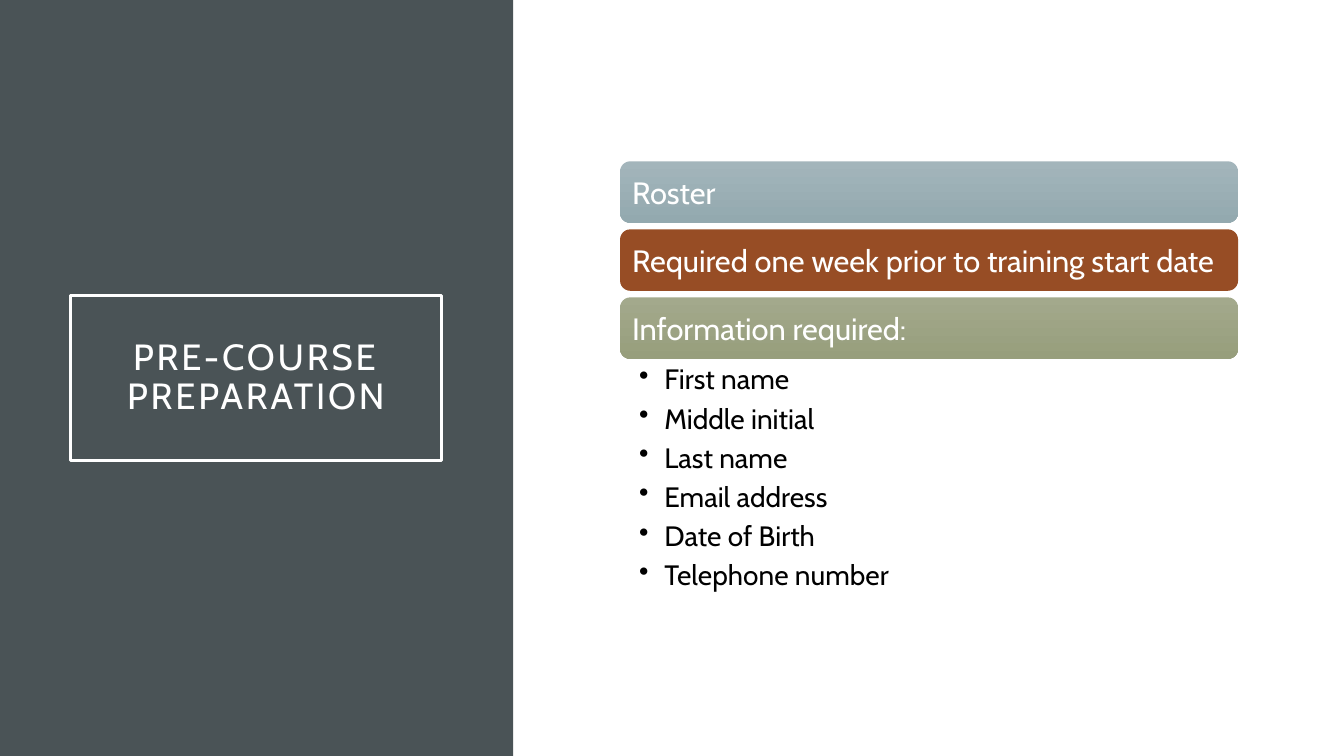
import pptx
import pptx.util
import pptx.dml.color
import pptx.enum.shapes
import pptx.enum.text
import pptx.oxml.ns
from lxml import etree

Inches = pptx.util.Inches
Pt = pptx.util.Pt
SHAPES = pptx.enum.shapes.MSO_SHAPE
ANCHOR = pptx.enum.text.MSO_ANCHOR
ALIGN = pptx.enum.text.PP_ALIGN

TITLE = "PRE-COURSE PREPARATION"
BARS = [
    ("Roster", ("blue_top", "blue_bottom")),
    ("Required one week prior to training start date", ("rust",)),
    ("Information required:", ("green_top", "green_bottom")),
]
DETAILS = ["First name", "Middle initial", "Last name",
           "Email address", "Date of Birth", "Telephone number"]
COLORS = {
    "panel": "4A5356", "white": "FFFFFF", "black": "000000",
    "blue_top": "A3B5BB", "blue_bottom": "93A9AF", "rust": "974D25",
    "green_top": "A3A98C", "green_bottom": "979E7C",
}
FONT = "Cabin"
BAR_LEFT, BAR_TOP, BAR_WIDTH, BAR_HEIGHT = 6.15, 1.6, 6.13, 0.61
BAR_STEP = 0.675


def color(name):
    return pptx.dml.color.RGBColor.from_string(COLORS[name])


def add_box(slide, kind, left, top, width, height, fills=()):
    shape = slide.shapes.add_shape(
        kind, Inches(left), Inches(top), Inches(width), Inches(height))
    shape.shadow.inherit = False
    shape.line.fill.background()
    if len(fills) == 2:
        shape.fill.gradient()
        shape.fill.gradient_angle = 270
        for stop, name in zip(shape.fill.gradient_stops, fills):
            stop.color.rgb = color(name)
    elif fills:
        shape.fill.solid()
        shape.fill.fore_color.rgb = color(fills[0])
    else:
        shape.fill.background()
    return shape


def set_frame(shape, insets, anchor):
    frame = shape.text_frame
    frame.word_wrap = True
    frame.vertical_anchor = anchor
    (frame.margin_left, frame.margin_top,
     frame.margin_right, frame.margin_bottom) = map(Inches, insets)
    return frame


def add_run(paragraph, text, size, name):
    run = paragraph.add_run()
    run.text = text
    run.font.size = Pt(size)
    run.font.name = FONT
    run.font.color.rgb = color(name)
    return run


def add_bullet(paragraph):
    properties = paragraph._p.get_or_add_pPr()
    properties.set("marL", str(Inches(0.25)))
    properties.set("indent", str(Inches(-0.25)))
    bullet = etree.SubElement(properties, pptx.oxml.ns.qn("a:buChar"))
    bullet.set("char", "•")


def add_title(slide):
    add_box(slide, SHAPES.RECTANGLE, 0, 0, 5.09, 7.5, ("panel",))
    shape = add_box(slide, SHAPES.RECTANGLE, 0.7, 2.93, 3.68, 1.64)
    shape.line.color.rgb = color("white")
    shape.line.width = Pt(2.5)
    paragraph = set_frame(shape, (0.2,) * 4, ANCHOR.MIDDLE).paragraphs[0]
    paragraph.alignment = ALIGN.CENTER
    paragraph.line_spacing = 0.9
    run = add_run(paragraph, TITLE, 26, "white")
    run._r.get_or_add_rPr().set("spc", "200")


def add_bars(slide):
    for index, (text, fills) in enumerate(BARS):
        shape = add_box(slide, SHAPES.ROUNDED_RECTANGLE, BAR_LEFT,
                        BAR_TOP + index * BAR_STEP, BAR_WIDTH, BAR_HEIGHT, fills)
        paragraph = set_frame(shape, (0.09,) * 4, ANCHOR.MIDDLE).paragraphs[0]
        paragraph.alignment = ALIGN.LEFT
        add_run(paragraph, text, 22, "white")


def add_details(slide):
    top = BAR_TOP + (len(BARS) - 1) * BAR_STEP + BAR_HEIGHT
    box = slide.shapes.add_textbox(
        Inches(BAR_LEFT), Inches(top), Inches(BAR_WIDTH), Inches(2.34))
    frame = set_frame(box, (0.19, 0.03, 0.16, 0.03), ANCHOR.TOP)
    for index, text in enumerate(DETAILS):
        paragraph = frame.add_paragraph() if index else frame.paragraphs[0]
        add_bullet(paragraph)
        paragraph.space_after = Pt(4)
        add_run(paragraph, text, 20, "black")


def main():
    presentation = pptx.Presentation()
    presentation.slide_width = Inches(13.33)
    presentation.slide_height = Inches(7.5)
    slide = presentation.slides.add_slide(presentation.slide_layouts[6])
    add_title(slide)
    add_bars(slide)
    add_details(slide)
    presentation.save("out.pptx")


if __name__ == "__main__":
    main()
